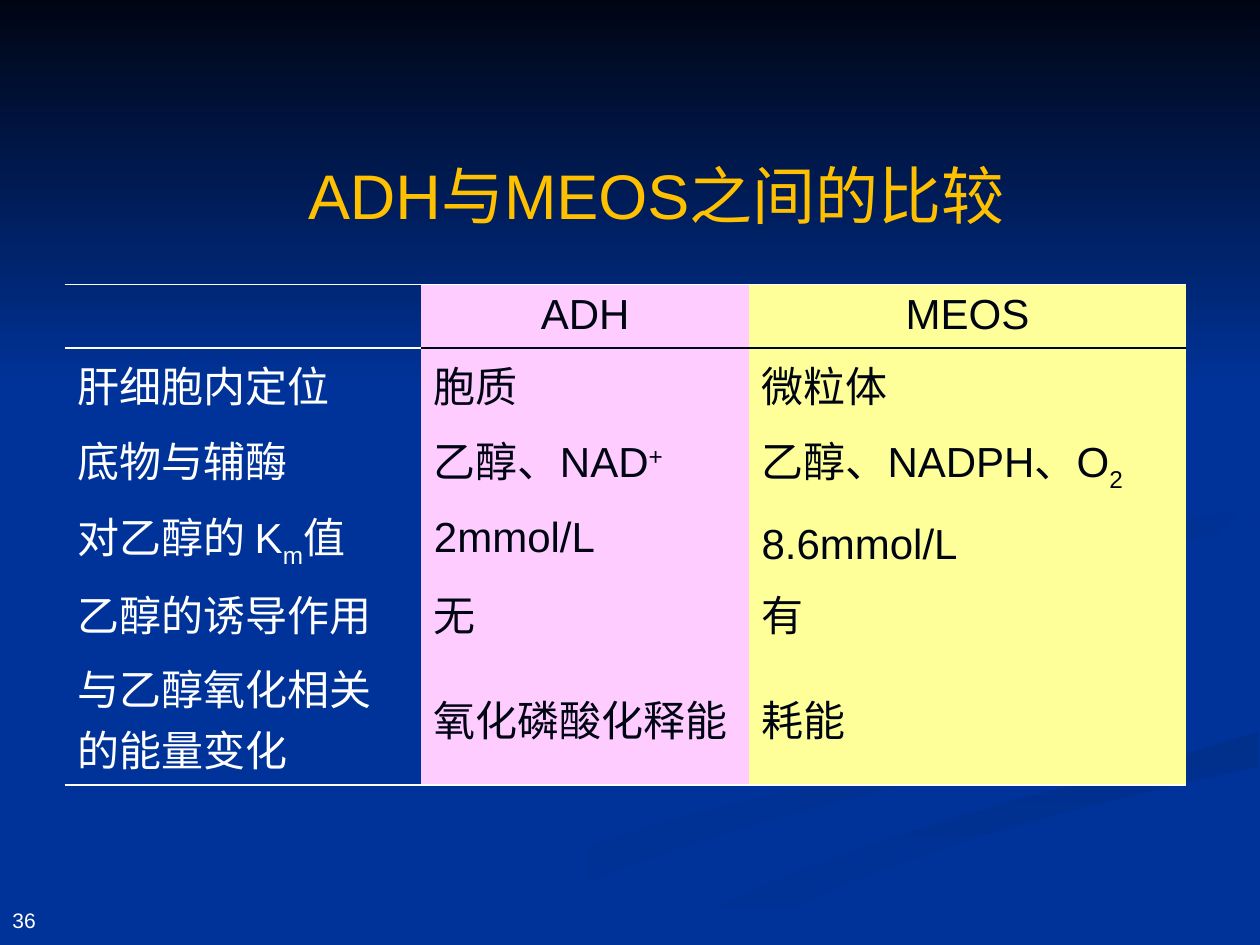
import pptx
import pptx.dml.color
import pptx.enum.shapes
import pptx.enum.text
import pptx.oxml
import pptx.oxml.ns
import pptx.util

Pt = pptx.util.Pt
RGBColor = pptx.dml.color.RGBColor
Anchor = pptx.enum.text.MSO_ANCHOR
Align = pptx.enum.text.PP_ALIGN

BLUE = RGBColor(0x00, 0x33, 0x99)
SHADE = RGBColor(0x00, 0x2F, 0x8C)
PALE_SHADE = RGBColor(0x00, 0x31, 0x93)
NAVY = RGBColor(0x00, 0x05, 0x14)
GOLD = RGBColor(0xFF, 0xC0, 0x00)
WHITE = RGBColor(0xFF, 0xFF, 0xFF)
PINK = RGBColor(0xFF, 0xCC, 0xFF)
YELLOW = RGBColor(0xFF, 0xFF, 0x99)

FONT = "Arial"
NO_GRID_STYLE = "{2D5ABB26-0587-4C30-8999-92F81FD0307C}"
COL_WIDTHS = [203.8, 187.2, 249.8]
ROW_HEIGHTS = [36, 42.9, 43.4, 44.6, 42.3, 76.6]
COL_FILLS = [None, PINK, YELLOW]
COL_INKS = [WHITE, NAVY, NAVY]
SUPER, SUB = 30000, -25000
ROWS = [
    [[], [("ADH", 0)], [("MEOS", 0)]],
    [[("肝细胞内定位", 0)], [("胞质", 0)], [("微粒体", 0)]],
    [[("底物与辅酶", 0)], [("乙醇、NAD", 0), ("+", SUPER)],
     [("乙醇、NADPH、O", 0), ("2", SUB)]],
    [[("对乙醇的 K", 0), ("m", SUB), ("值", 0)], [("2mmol/L", 0)], [("8.6mmol/L", 0)]],
    [[("乙醇的诱导作用", 0)], [("无", 0)], [("有", 0)]],
    [[("与乙醇氧化相关的能量变化", 0)], [("氧化磷酸化释能", 0)], [("耗能", 0)]],
]
MIDDLE_ROWS = (3, 5)

LEFT_SWOOSH = [
    (562, 398), (525, 383), (476, 369), (442, 357), (423, 346), (414, 335),
    (414, 330), (410, 337), (415, 346), (433, 356), (471, 369), (514, 382),
    (549, 394), (564, 402), (565, 410), (557, 420), (539, 428), (503, 438),
    (444, 453), (388, 467), (330, 485), (271, 509), (216, 539), (260, 539),
    (310, 514), (359, 495), (406, 479), (449, 466), (503, 452), (544, 442),
    (566, 433), (574, 424), (576, 418), (572, 408)]
LOWER_SWOOSH = [
    (374, 538), (362, 539), (411, 539), (432, 528), (454, 518), (482, 505),
    (520, 491), (565, 476), (620, 461), (683, 446), (719, 438), (719, 418),
    (703, 423), (674, 432), (624, 446), (574, 459), (550, 466), (501, 482),
    (454, 499), (410, 518)]
RIGHT_SWOOSH = [
    (562, 331), (563, 338), (570, 344), (580, 350), (595, 357), (582, 348),
    (580, 340), (585, 333), (607, 323), (645, 313), (687, 307), (719, 302),
    (719, 289), (696, 294), (647, 301), (601, 309), (575, 318)]


def set_gradient(s, start, end, angle):
    """Fill a shape with a two-colour gradient and remove its outline."""
    s.shadow.inherit = False
    s.line.fill.background()
    s.fill.gradient()
    s.fill.gradient_angle = angle
    for stop, color, position in zip(s.fill.gradient_stops, (start, end), (0, 1)):
        stop.color.rgb = color
        stop.position = position


def add_swoosh(slide, points, start, end, angle):
    """Draw one closed background sweep."""
    builder = slide.shapes.build_freeform(*points[0], scale=Pt(1))
    builder.add_line_segments(points[1:], close=True)
    set_gradient(builder.convert_to_shape(), start, end, angle)


def add_backdrop(slide, width, height):
    """Paint the blue ground, the sweeps and the dark sky band."""
    slide.background.fill.solid()
    slide.background.fill.fore_color.rgb = BLUE
    add_swoosh(slide, LEFT_SWOOSH, BLUE, PALE_SHADE, 0)
    add_swoosh(slide, LOWER_SWOOSH, SHADE, BLUE, 270)
    add_swoosh(slide, RIGHT_SWOOSH, PALE_SHADE, BLUE, 315)
    sky = slide.shapes.add_shape(
        pptx.enum.shapes.MSO_SHAPE.RECTANGLE, 0, 0, Pt(width), Pt(height))
    set_gradient(sky, NAVY, BLUE, 270)


def add_run(p, text, size, color, baseline=0):
    """Append a styled run, raised or lowered when a baseline is given."""
    r = p.add_run()
    r.text = text
    r.font.name = FONT
    r.font.size = Pt(size)
    r.font.color.rgb = color
    if baseline:
        r.font._element.set("baseline", str(baseline))


def add_label(slide, box, text, size, color, anchor, align):
    """Place a one-line text box."""
    tf = slide.shapes.add_textbox(*map(Pt, box)).text_frame
    tf.word_wrap = True
    tf.vertical_anchor = anchor
    p = tf.paragraphs[0]
    p.alignment = align
    add_run(p, text, size, color)


def set_border(cell, side, color):
    """Give one side of a cell a one-point rule, or none without a colour."""
    fill = "<a:noFill/>"
    if color is not None:
        fill = f'<a:solidFill><a:srgbClr val="{color}"/></a:solidFill>'
    cell._tc.get_or_add_tcPr().append(pptx.oxml.parse_xml(
        f'<a:ln{side} {pptx.oxml.ns.nsdecls("a")} w="12700">{fill}</a:ln{side}>'))


def fill_cell(cell, row, col):
    """Write one comparison cell with its rules and fill."""
    rules = {0: WHITE, 1: COL_INKS[col], len(ROWS): WHITE}
    set_border(cell, "T", rules.get(row))
    set_border(cell, "B", rules.get(row + 1))
    if COL_FILLS[col] is None:
        cell.fill.background()
    else:
        cell.fill.solid()
        cell.fill.fore_color.rgb = COL_FILLS[col]
    if row in MIDDLE_ROWS and col:
        cell.vertical_anchor = Anchor.MIDDLE
    p = cell.text_frame.paragraphs[0]
    p.space_before = Pt(4.8)
    if row == 0:
        p.alignment = Align.CENTER
    if ROWS[row][col] == [("8.6mmol/L", 0)]:
        p.line_spacing = 1.3
    for text, baseline in ROWS[row][col]:
        add_run(p, text, 24, COL_INKS[col], baseline)


def add_comparison(slide, left, top):
    """Build the enzyme comparison table."""
    table = slide.shapes.add_table(
        len(ROWS), len(COL_WIDTHS), Pt(left), Pt(top),
        Pt(sum(COL_WIDTHS)), Pt(sum(ROW_HEIGHTS))).table
    table.horz_banding = False
    table.first_row = False
    table._tbl.tblPr.find(pptx.oxml.ns.qn("a:tableStyleId")).text = NO_GRID_STYLE
    for column, width in zip(table.columns, COL_WIDTHS):
        column.width = Pt(width)
    for row, height in enumerate(ROW_HEIGHTS):
        table.rows[row].height = Pt(height)
        for col in range(len(COL_WIDTHS)):
            fill_cell(table.cell(row, col), row, col)


def main():
    """Build and save the slide."""
    prs = pptx.Presentation()
    prs.slide_width, prs.slide_height = Pt(720), Pt(540)
    slide = prs.slides.add_slide(prs.slide_layouts[6])
    add_backdrop(slide, 720, 222)
    add_label(slide, (110, 82.5, 530, 57), "ADH与MEOS之间的比较", 36, GOLD,
              Anchor.MIDDLE, Align.CENTER)
    add_comparison(slide, 37, 162.7)
    add_label(slide, (0, 499, 168, 37.5), "36", 12, WHITE, Anchor.BOTTOM, Align.LEFT)
    prs.save("out.pptx")


if __name__ == "__main__":
    main()
